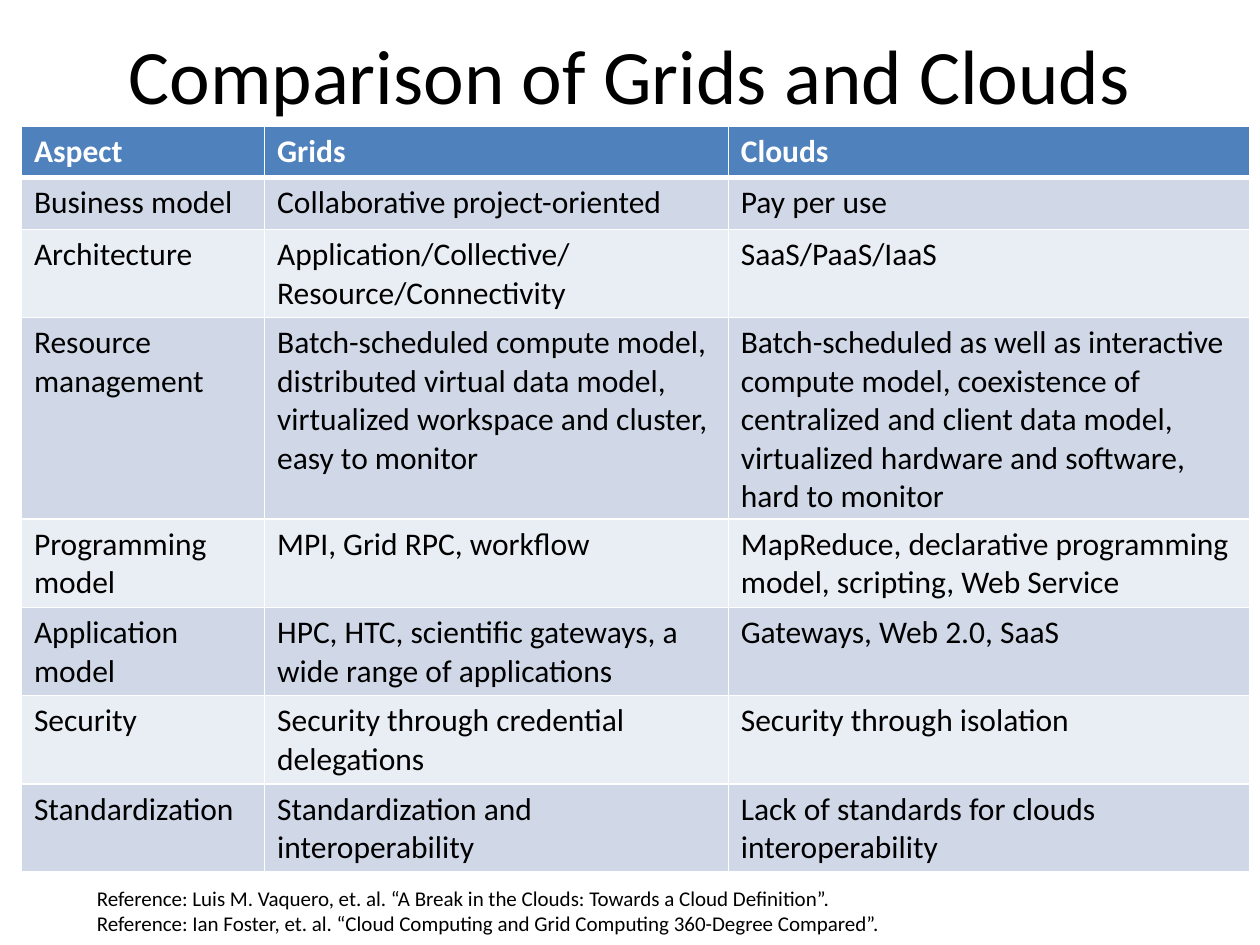
import pptx
import pptx.dml.color
import pptx.enum.text
import pptx.oxml
import pptx.oxml.ns
import pptx.util

ROWS = [
    ("Aspect", "Grids", "Clouds"),
    ("Business model", "Collaborative project-oriented", "Pay per use"),
    ("Architecture", "Application/Collective/Resource/Connectivity", "SaaS/PaaS/IaaS"),
    ("Resource management",
     "Batch-scheduled compute model, distributed virtual data model, "
     "virtualized workspace and cluster, easy to monitor",
     "Batch-scheduled as well as interactive compute model, coexistence of "
     "centralized and client data model, virtualized hardware and software, hard to monitor"),
    ("Programming model", "MPI, Grid RPC, workflow",
     "MapReduce, declarative programming model, scripting, Web Service"),
    ("Application model", "HPC, HTC, scientific gateways, a wide range of applications",
     "Gateways, Web 2.0, SaaS"),
    ("Security", "Security through credential delegations", "Security through isolation"),
    ("Standardization", "Standardization and interoperability",
     "Lack of standards for clouds interoperability"),
]
REFERENCES = [
    "Reference: Luis M. Vaquero, et. al. “A Break in the Clouds: Towards a Cloud Definition”.",
    "Reference: Ian Foster, et. al. “Cloud Computing and Grid Computing 360-Degree Compared”.",
]


def color(value):
    return pptx.dml.color.RGBColor.from_string(value)


class SlideBuilder:
    """Draws styled elements on a slide with a grid of 100 columns by 75 rows."""

    FONT = "Calibri"
    TEXT, LIGHT, HEADER = "000000", "FFFFFF", "4F81BD"
    BANDS = ("E9EDF4", "D0D8E8")

    def __init__(self, presentation):
        self.slide = presentation.slides.add_slide(presentation.slide_layouts[6])
        self.column = presentation.slide_width / 100
        self.row = presentation.slide_height / 75

    def place(self, left, top, width, height):
        return [round(length * unit) for length, unit in
                ((left, self.column), (top, self.row), (width, self.column), (height, self.row))]

    def format_text(self, text_frame, size, value, bold=False, align=None):
        for paragraph in text_frame.paragraphs:
            paragraph.alignment = align
            for run in paragraph.runs:
                run.font.name = self.FONT
                run.font.size = pptx.util.Pt(size)
                run.font.bold = bold
                run.font.color.rgb = color(value)

    def text(self, area, text, size, align=None, anchor=pptx.enum.text.MSO_ANCHOR.TOP):
        shape = self.slide.shapes.add_textbox(*self.place(*area))
        text_frame = shape.text_frame
        text_frame.word_wrap = True
        text_frame.vertical_anchor = anchor
        text_frame.text = text
        self.format_text(text_frame, size, self.TEXT, align=align)

    def border(self, cell, side, points):
        cell._tc.get_or_add_tcPr().append(pptx.oxml.parse_xml(
            f'<a:ln{side} {pptx.oxml.ns.nsdecls("a")} w="{pptx.util.Pt(points)}">'
            f'<a:solidFill><a:srgbClr val="{self.LIGHT}"/></a:solidFill></a:ln{side}>'))

    def table(self, left, top, widths, row_height, rows, size):
        area = self.place(left, top, sum(widths), row_height * len(rows))
        table = self.slide.shapes.add_table(len(rows), len(widths), *area).table
        for column, width in zip(table.columns, widths):
            column.width = round(width * self.column)
        for index, texts in enumerate(rows):
            table.rows[index].height = round(row_height * self.row)
            header = index == 0
            for cell, text in zip(table.rows[index].cells, texts):
                for side in "LRTB":
                    thick = (side == "B" and header) or (side == "T" and index == 1)
                    self.border(cell, side, 3 if thick else 1)
                cell.fill.solid()
                cell.fill.fore_color.rgb = color(self.HEADER if header else self.BANDS[index % 2])
                cell.text_frame.text = text
                self.format_text(cell.text_frame, size, self.LIGHT if header else self.TEXT, header)


def main():
    presentation = pptx.Presentation()
    presentation.slide_width = pptx.util.Inches(10)
    presentation.slide_height = pptx.util.Inches(7.5)
    builder = SlideBuilder(presentation)
    builder.text((5, 0, 90, 11.7), "Comparison of Grids and Clouds", 44,
                 pptx.enum.text.PP_ALIGN.CENTER, pptx.enum.text.MSO_ANCHOR.MIDDLE)
    builder.table(1.7, 10, (19.3, 36.8, 41.4), 4.1, ROWS, 18)
    builder.text((6.7, 69.8, 88.3, 5), "\n".join(REFERENCES), 12)
    presentation.save("out.pptx")


if __name__ == "__main__":
    main()
